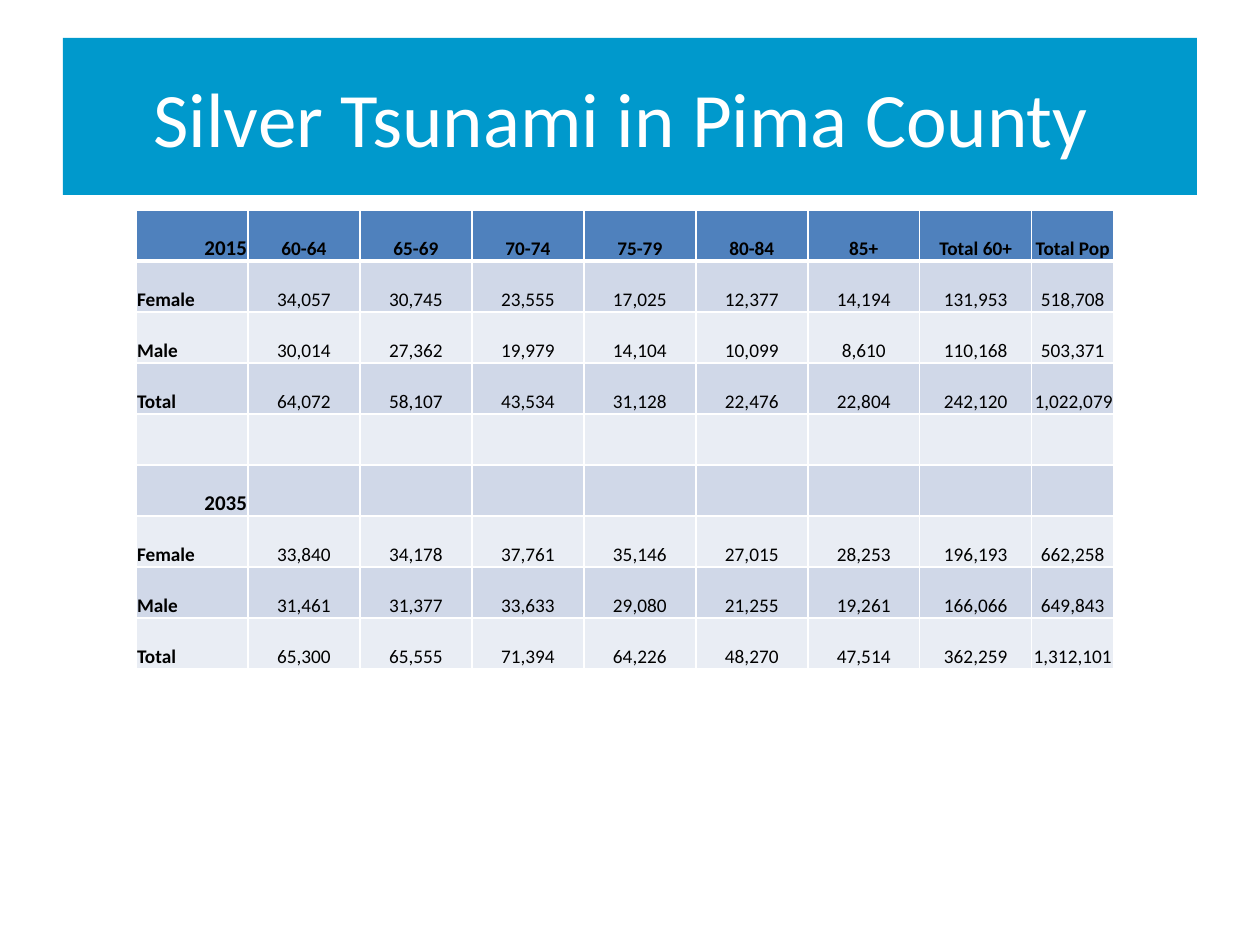
from lxml import etree
from pptx import Presentation
from pptx import util as u
from pptx.dml.color import RGBColor
from pptx.enum import shapes, text
from pptx.oxml import ns

TITLE = "Silver Tsunami in Pima County "
ROWS = [
    ["2015", "60-64", "65-69", "70-74", "75-79", "80-84", "85+", "Total 60+", "Total Pop"],
    ["Female", "34,057", "30,745", "23,555", "17,025", "12,377", "14,194", "131,953", "518,708"],
    ["Male", "30,014", "27,362", "19,979", "14,104", "10,099", "8,610", "110,168", "503,371"],
    ["Total", "64,072", "58,107", "43,534", "31,128", "22,476", "22,804", "242,120", "1,022,079"],
    [""] * 9,
    ["2035"] + [""] * 8,
    ["Female", "33,840", "34,178", "37,761", "35,146", "27,015", "28,253", "196,193", "662,258"],
    ["Male", "31,461", "31,377", "33,633", "29,080", "21,255", "19,261", "166,066", "649,843"],
    ["Total", "65,300", "65,555", "71,394", "64,226", "48,270", "47,514", "362,259", "1,312,101"],
]
YEARS = ("2015", "2035")
WIDTHS = [112] * 8 + [82]
ROW_HEIGHT = 51
HEADER, BANDS, WHITE, BLACK = "4F81BD", ("E9EDF4", "D0D8E8"), "FFFFFF", "000000"
ALIGN = text.PP_ALIGN


def px(n):
    """Turn pixels into EMU."""
    return u.Emu(round(n * 914400 / 126))


def colour(value):
    """Turn a hex string into a colour."""
    return RGBColor.from_string(value)


def assign(target, values):
    """Set attributes from a dict."""
    for name, value in values.items():
        setattr(target, name, value)


def write(frame, words, align, size, ink, bold=False):
    """Write one formatted line into a text frame."""
    line = frame.paragraphs[0]
    line.alignment = align
    run = line.add_run()
    run.text = words
    assign(run.font, {"name": "Calibri", "size": u.Pt(size), "bold": bold})
    run.font.color.rgb = colour(ink)


def paint(part, value):
    """Give a part a solid fill."""
    part.fill.solid()
    part.fill.fore_color.rgb = colour(value)


def border(cell, points):
    """Draw white borders, with a width in points for each side."""
    properties = cell._tc.get_or_add_tcPr()
    for side, width in points.items():
        edge = etree.SubElement(properties, ns.qn("a:ln" + side), w=str(u.Pt(width)))
        fill = etree.SubElement(edge, ns.qn("a:solidFill"))
        etree.SubElement(fill, ns.qn("a:srgbClr"), val=WHITE)


def add_banner(slide):
    """Add the title banner."""
    banner = slide.shapes.add_shape(shapes.MSO_SHAPE.RECTANGLE, px(63), px(38), px(1134), px(157))
    banner.shadow.inherit = False
    paint(banner, "0099CC")
    banner.line.fill.background()
    assign(banner.text_frame, {"word_wrap": True, "vertical_anchor": text.MSO_ANCHOR.MIDDLE})
    write(banner.text_frame, TITLE, ALIGN.CENTER, 44, WHITE)


def add_population(slide):
    """Add the population table."""
    population = slide.shapes.add_table(
        len(ROWS), len(WIDTHS), px(136), px(210), px(sum(WIDTHS)), px(ROW_HEIGHT * len(ROWS))
    ).table
    for column, width in zip(population.columns, WIDTHS):
        column.width = px(width)
    layout = {"vertical_anchor": text.MSO_ANCHOR.BOTTOM, "margin_left": px(1),
              "margin_right": px(1), "margin_top": px(1), "margin_bottom": 0}
    for r, values in enumerate(ROWS):
        population.rows[r].height = px(ROW_HEIGHT)
        for c, words in enumerate(values):
            cell = population.cell(r, c)
            assign(cell, layout)
            border(cell, {"L": 1, "R": 1, "T": 3 if r == 1 else 1, "B": 3 if r == 0 else 1})
            paint(cell, BANDS[r % 2] if r else HEADER)
            if not words:
                continue
            year = words in YEARS
            if year or words == "1,022,079":
                align = ALIGN.RIGHT
            else:
                align = ALIGN.CENTER if c else ALIGN.LEFT
            write(cell.text_frame, words, align, 12 if year else 11, BLACK, r == 0 or c == 0)


def main():
    """Build the slide and save it."""
    deck = Presentation()
    assign(deck, {"slide_width": px(1260), "slide_height": px(945)})
    slide = deck.slides.add_slide(deck.slide_layouts[6])
    add_banner(slide)
    add_population(slide)
    deck.save("out.pptx")


if __name__ == "__main__":
    main()
